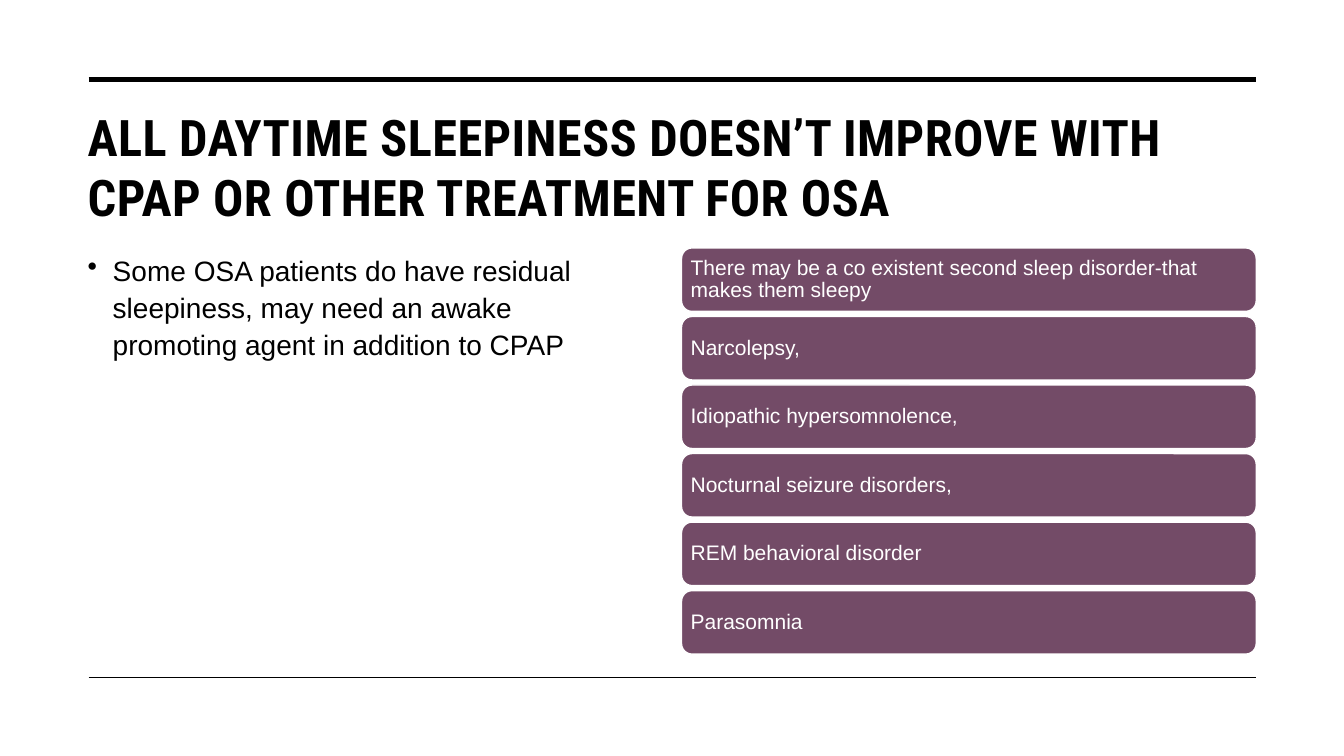
"""Build the slide on daytime sleepiness that persists after OSA treatment."""
from dataclasses import dataclass

from lxml.etree import SubElement
from pptx import Presentation
from pptx.dml.color import RGBColor
from pptx.enum.shapes import MSO_CONNECTOR, MSO_SHAPE
from pptx.enum.text import MSO_ANCHOR, MSO_AUTO_SIZE, PP_ALIGN
from pptx.oxml.ns import qn
from pptx.slide import Slide
from pptx.text.text import TextFrame
from pptx.util import Emu, Pt

BLACK = RGBColor(0x00, 0x00, 0x00)
WHITE = RGBColor(0xFF, 0xFF, 0xFF)
PLUM = RGBColor(0x73, 0x4B, 0x67)
TITLE = "ALL DAYTIME SLEEPINESS DOESN’T IMPROVE WITH CPAP OR OTHER TREATMENT FOR OSA"
BODY = ("Some OSA patients do have residual sleepiness, may need an awake "
        "promoting agent in addition to CPAP")
CAUSES = (
    "There may be a co existent second sleep disorder-that makes them sleepy",
    "Narcolepsy,",
    "Idiopathic hypersomnolence,",
    "Nocturnal seizure disorders,",
    "REM behavioral disorder",
    "Parasomnia",
)
BAR_TOP, BAR_STEP = 246, 68


@dataclass(frozen=True)
class Rule:
    """A horizontal line across the slide."""
    top: int
    weight: float


@dataclass(frozen=True)
class Bar:
    """A rounded bar naming one cause."""
    top: int
    text: str


RULES = (Rule(79, 3.5), Rule(672, 1))
BARS = [Bar(BAR_TOP + i * BAR_STEP, text) for i, text in enumerate(CAUSES)]


def px(count: int) -> Emu:
    """Turn px, a hundred to the inch, into EMU."""
    return Emu(count * 9144)


def set_text(frame: TextFrame, text: str, face: str, size: int, color: RGBColor) -> None:
    """Fill a frame with one wrapped, left-aligned paragraph."""
    frame.word_wrap = True
    frame.auto_size = MSO_AUTO_SIZE.NONE
    frame.text = text
    para = frame.paragraphs[0]
    para.alignment = PP_ALIGN.LEFT
    font = para.font
    font.name, font.size, font.color.rgb = face, Pt(size), color


def add_rule(slide: Slide, rule: Rule) -> None:
    """Draw a black rule."""
    line = slide.shapes.add_connector(
        MSO_CONNECTOR.STRAIGHT, px(88), px(rule.top), px(1246), px(rule.top))
    line.line.color.rgb = BLACK
    line.line.width = Pt(rule.weight)
    SubElement(line._element.spPr, qn("a:effectLst"))


def add_title(slide: Slide) -> None:
    """Place and format the title."""
    title = slide.shapes.title
    title.left, title.top, title.width, title.height = px(77), px(100), px(1169), px(143)
    frame = title.text_frame
    set_text(frame, TITLE, "Roboto Condensed", 36, BLACK)
    frame.vertical_anchor = MSO_ANCHOR.TOP
    para = frame.paragraphs[0]
    para.font.bold = True
    para.runs[0].font._element.set("spc", "30")


def add_body(slide: Slide) -> None:
    """Add the bulleted remark."""
    box = slide.shapes.add_textbox(px(77), px(243), px(570), px(409))
    set_text(box.text_frame, BODY, "Arial", 20, BLACK)
    para = box.text_frame.paragraphs[0]
    para.line_spacing, para.space_before = 1.1, Pt(10)
    props = para._p.get_or_add_pPr()
    props.set("marL", str(px(25)))
    props.set("indent", str(px(-25)))
    bullet = props.makeelement(qn("a:buChar"), {"char": "•"})
    props.find(qn("a:defRPr")).addprevious(bullet)


def add_bar(slide: Slide, bar: Bar) -> None:
    """Add a plum bar with its label."""
    shape = slide.shapes.add_shape(
        MSO_SHAPE.ROUNDED_RECTANGLE, px(676), px(bar.top), px(570), px(63))
    shape.shadow.inherit = False
    shape.fill.solid()
    shape.fill.fore_color.rgb = PLUM
    shape.line.color.rgb = WHITE
    shape.line.width = Pt(1)
    frame = shape.text_frame
    set_text(frame, bar.text, "Arial", 15, WHITE)
    frame.vertical_anchor = MSO_ANCHOR.MIDDLE
    frame.margin_left = frame.margin_right = px(6)
    frame.margin_top = frame.margin_bottom = px(6)
    frame.paragraphs[0].line_spacing = 0.9


def main() -> None:
    """Build and save the deck."""
    deck = Presentation()
    deck.slide_width, deck.slide_height = px(1333), px(750)
    slide = deck.slides.add_slide(deck.slide_layouts[5])
    for rule in RULES:
        add_rule(slide, rule)
    add_title(slide)
    add_body(slide)
    for bar in BARS:
        add_bar(slide, bar)
    deck.save("out.pptx")


if __name__ == "__main__":
    main()
